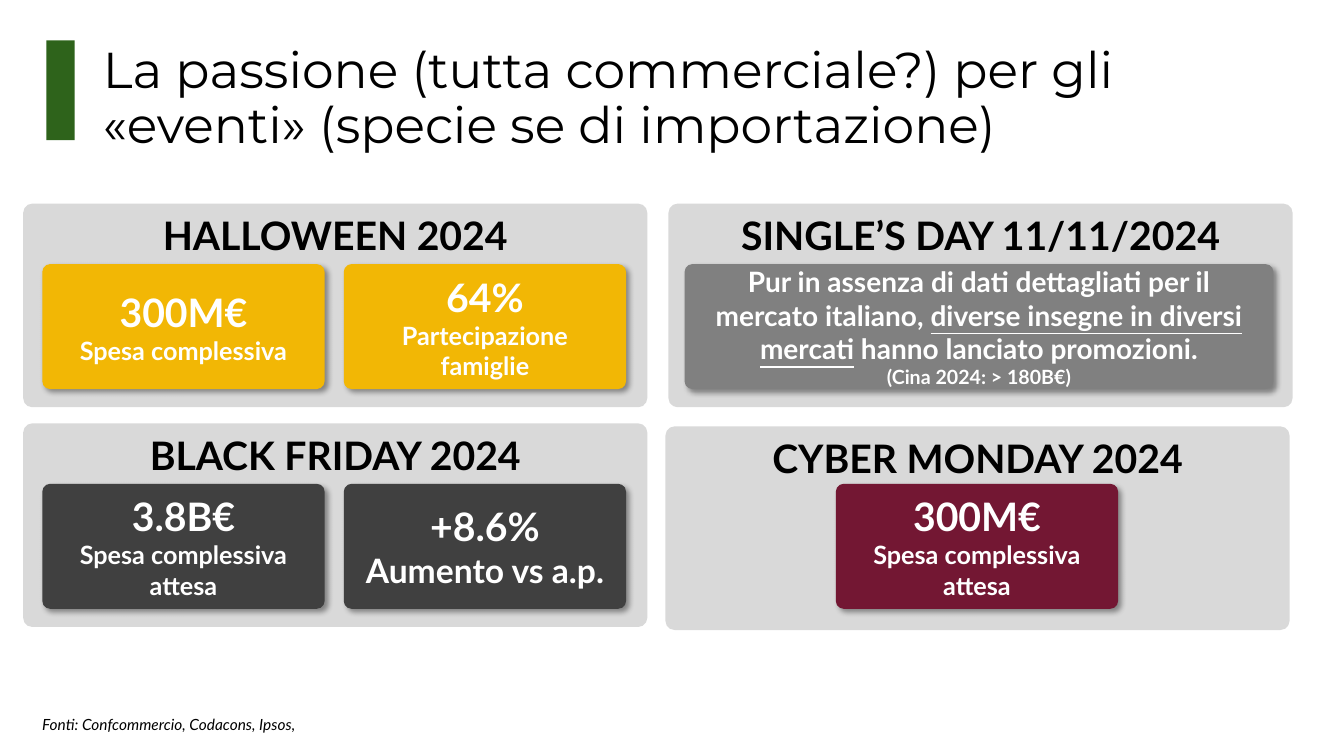
from dataclasses import dataclass

from lxml.etree import SubElement
from pptx import Presentation
from pptx.dml.color import RGBColor
from pptx.enum.shapes import MSO_SHAPE as Preset
from pptx.enum.text import MSO_ANCHOR as Anchor, MSO_AUTO_SIZE as AutoSize, PP_ALIGN as Align
from pptx.oxml.ns import qn
from pptx.util import Inches, Pt


@dataclass(frozen=True)
class Theme:
    title_font: str = "Montserrat"
    body_font: str = "Lato"
    black: str = "000000"
    white: str = "FFFFFF"
    accent: str = "2E631B"
    panel: str = "D9D9D9"
    halloween: str = "F2B705"
    singles: str = "808080"
    black_friday: str = "404040"
    cyber: str = "731733"
    title_size: int = 36
    heading_size: int = 28
    large_size: int = 24
    body_size: int = 20
    label_size: int = 18
    note_size: int = 14
    source_size: int = 11


THEME = Theme()


def add_text(paragraph, text, *, size, color, font=THEME.body_font,
             bold=False, italic=False, underline=False):
    run = paragraph.add_run()
    run.text = text
    run.font.name = font
    run.font.size = Pt(size)
    run.font.bold = bold
    run.font.italic = italic
    run.font.underline = underline
    run.font.color.rgb = RGBColor.from_string(color)


class SlideBuilder:
    def __init__(self, presentation, theme):
        self.theme = theme
        self.slide = presentation.slides.add_slide(presentation.slide_layouts[5])

    def title(self, text, left, top, width, height):
        shape = self.slide.shapes.title
        shape.left, shape.top = Inches(left), Inches(top)
        shape.width, shape.height = Inches(width), Inches(height)
        frame = shape.text_frame
        frame.auto_size = AutoSize.NONE
        frame.vertical_anchor = Anchor.TOP
        paragraph = frame.paragraphs[0]
        paragraph.alignment = Align.LEFT
        paragraph.line_spacing = 0.9
        add_text(paragraph, text, size=self.theme.title_size,
                 color=self.theme.black, font=self.theme.title_font)

    def box(self, parent, preset, left, top, width, height, fill, radius=None):
        shape = parent.shapes.add_shape(
            preset, Inches(left), Inches(top), Inches(width), Inches(height))
        shape.shadow.inherit = False
        shape.fill.solid()
        shape.fill.fore_color.rgb = RGBColor.from_string(fill)
        shape.line.fill.background()
        if radius is not None:
            shape.adjustments[0] = radius
        return shape

    def panel(self, heading, left, top):
        group = self.slide.shapes.add_group_shape()
        shape = self.box(group, Preset.ROUNDED_RECTANGLE, left, top, 6.19, 2.02,
                         self.theme.panel, radius=0.045)
        shape.text_frame.vertical_anchor = Anchor.TOP
        paragraph = shape.text_frame.paragraphs[0]
        paragraph.alignment = Align.CENTER
        add_text(paragraph, heading, size=self.theme.heading_size,
                 color=self.theme.black, bold=True)
        return group

    def card(self, group, lines, left, top, fill, width=2.8):
        """Each line is a list of (text, size, underline) pieces."""
        shape = self.box(group, Preset.ROUNDED_RECTANGLE, left, top, width, 1.24,
                         fill, radius=0.063)
        self.soft_shadow(shape)
        shape.text_frame.vertical_anchor = Anchor.MIDDLE
        paragraph = shape.text_frame.paragraphs[0]
        paragraph.alignment = Align.CENTER
        for index, line in enumerate(lines):
            if index:
                paragraph.add_line_break()
            for text, size, underline in line:
                add_text(paragraph, text, size=size, color=self.theme.white,
                         bold=True, underline=underline)

    def soft_shadow(self, shape):
        effects = shape._element.spPr.find(qn("a:effectLst"))
        shadow = SubElement(effects, qn("a:outerShdw"), blurRad=str(Pt(4)),
                            dist=str(Pt(3)), dir="2700000", algn="tl", rotWithShape="0")
        color = SubElement(shadow, qn("a:srgbClr"), val=self.theme.black)
        SubElement(color, qn("a:alpha"), val="40000")

    def source(self, text, left, top, width, height):
        shape = self.slide.shapes.add_textbox(
            Inches(left), Inches(top), Inches(width), Inches(height))
        shape.text_frame.word_wrap = False
        shape.text_frame.auto_size = AutoSize.SHAPE_TO_FIT_TEXT
        add_text(shape.text_frame.paragraphs[0], text, size=self.theme.source_size,
                 color=self.theme.black, italic=True)


def figure(value, label, label_size=THEME.label_size):
    return [[(value, THEME.heading_size, False)], [(label, label_size, False)]]


def main():
    presentation = Presentation()
    presentation.slide_width, presentation.slide_height = Inches(13.33), Inches(7.5)
    builder = SlideBuilder(presentation, THEME)

    # Title and accent bar
    builder.box(builder.slide, Preset.RECTANGLE, 0.46, 0.4, 0.28, 0.99, THEME.accent)
    builder.title("La passione (tutta commerciale?) per gli «eventi» "
                  "(specie se di importazione)", 0.92, 0.4, 11.5, 1.45)

    # Panels with key figures
    singles_lines = [
        [("Pur in assenza di dati dettagliati per il mercato italiano, ",
          THEME.body_size, False),
         ("diverse insegne in diversi mercati", THEME.body_size, True),
         (" hanno lanciato promozioni.", THEME.body_size, False)],
        [("(Cina 2024: > 180B€)", THEME.note_size, False)],
    ]
    upper, lower = 2.62, 4.8
    first, second = 0.42, 3.41

    halloween = builder.panel("HALLOWEEN 2024", 0.23, 2.02)
    builder.card(halloween, figure("300M€", "Spesa complessiva"),
                 first, upper, THEME.halloween)
    builder.card(halloween, figure("64%", "Partecipazione famiglie"),
                 second, upper, THEME.halloween)

    singles = builder.panel("SINGLE’S DAY 11/11/2024", 6.63, 2.02)
    builder.card(singles, singles_lines, 6.79, upper, THEME.singles, width=5.84)

    black_friday = builder.panel("BLACK FRIDAY 2024", 0.23, 4.2)
    builder.card(black_friday, figure("3.8B€", "Spesa complessiva attesa"),
                 first, lower, THEME.black_friday)
    builder.card(black_friday, figure("+8.6%", "Aumento vs a.p.", THEME.large_size),
                 second, lower, THEME.black_friday)

    cyber = builder.panel("CYBER MONDAY 2024", 6.6, 4.23)
    builder.card(cyber, figure("300M€", "Spesa complessiva attesa"),
                 8.29, lower, THEME.cyber)

    # Sources
    builder.source("Fonti: Confcommercio, Codacons, Ipsos,", 0.32, 7.04, 2.8, 0.29)

    presentation.save("out.pptx")


if __name__ == "__main__":
    main()
